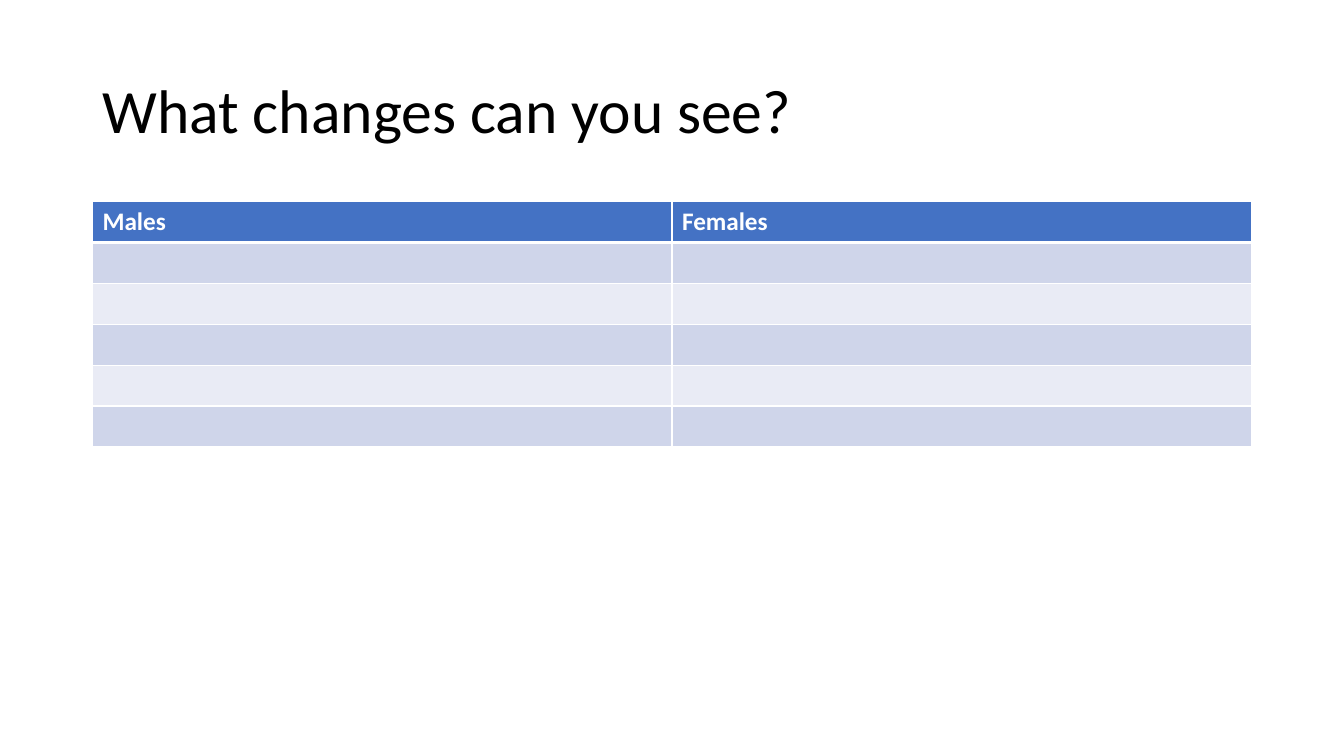
from dataclasses import dataclass

from lxml import etree
from pptx import Presentation
from pptx.dml.color import RGBColor
from pptx.enum.text import MSO_ANCHOR
from pptx.oxml.ns import qn
from pptx.slide import Slide
from pptx.table import _Cell
from pptx.text.text import _Paragraph
from pptx.util import Cm, Pt

MIDDLE = MSO_ANCHOR.MIDDLE

BLACK = RGBColor(0x00, 0x00, 0x00)
WHITE = RGBColor(0xFF, 0xFF, 0xFF)
HEADER_BLUE = RGBColor(0x44, 0x72, 0xC4)
BAND_DARK = RGBColor(0xCF, 0xD5, 0xEA)
BAND_LIGHT = RGBColor(0xE9, 0xEB, 0xF5)

TITLE_FORMAT = {"name": "Calibri", "size": Pt(44), "bold": False}
HEADER_FORMAT = {"name": "Calibri", "size": Pt(18), "bold": True}

LEFT, WIDTH = Cm(2.33), Cm(29.21)
ROW_HEIGHT = Cm(1.03)
THIN, THICK = Pt(1), Pt(3)


@dataclass(frozen=True)
class TableRow:
    texts: tuple[str, str]
    fill: RGBColor
    top: int = THIN
    bottom: int = THIN


ROWS = [
    TableRow(("Males", "Females"), HEADER_BLUE, bottom=THICK),
    TableRow(("", ""), BAND_DARK, top=THICK),
    TableRow(("", ""), BAND_LIGHT),
    TableRow(("", ""), BAND_DARK),
    TableRow(("", ""), BAND_LIGHT),
    TableRow(("", ""), BAND_DARK),
]


def add_span(para: _Paragraph, text: str, formats: dict, color: RGBColor) -> None:
    span = para.add_run()
    span.text = text
    for name, value in formats.items():
        setattr(span.font, name, value)
    span.font.color.rgb = color


def add_title(page: Slide, text: str) -> None:
    box = page.shapes.add_textbox(LEFT, Cm(1.01), WIDTH, Cm(3.68))
    frame = box.text_frame
    frame.word_wrap = True
    frame.vertical_anchor = MIDDLE
    para = frame.paragraphs[0]
    para.line_spacing = 0.9
    add_span(para, text, TITLE_FORMAT, BLACK)


def set_borders(cell: _Cell, top: int, bottom: int) -> None:
    """Draw white lines on all four sides; call before filling the cell."""
    properties = cell._tc.get_or_add_tcPr()
    widths = {"a:lnL": THIN, "a:lnR": THIN, "a:lnT": top, "a:lnB": bottom}
    for tag, width in widths.items():
        line = etree.SubElement(properties, qn(tag), w=str(int(width)))
        solid = etree.SubElement(line, qn("a:solidFill"))
        etree.SubElement(solid, qn("a:srgbClr"), val=str(WHITE))


def add_changes_table(page: Slide, rows: list[TableRow]) -> None:
    columns = len(rows[0].texts)
    table = page.shapes.add_table(
        len(rows), columns, LEFT, Cm(5.08), WIDTH, ROW_HEIGHT * len(rows)
    ).table
    for row_index, row in enumerate(rows):
        table.rows[row_index].height = ROW_HEIGHT
        for column_index, text in enumerate(row.texts):
            cell = table.cell(row_index, column_index)
            set_borders(cell, row.top, row.bottom)
            cell.fill.solid()
            cell.fill.fore_color.rgb = row.fill
            if text:
                add_span(cell.text_frame.paragraphs[0], text, HEADER_FORMAT, WHITE)


def main() -> None:
    deck = Presentation()
    deck.slide_width, deck.slide_height = Cm(33.87), Cm(19.05)
    page = deck.slides.add_slide(deck.slide_layouts[6])
    add_title(page, "What changes can you see?")
    add_changes_table(page, ROWS)
    deck.save("out.pptx")


if __name__ == "__main__":
    main()
